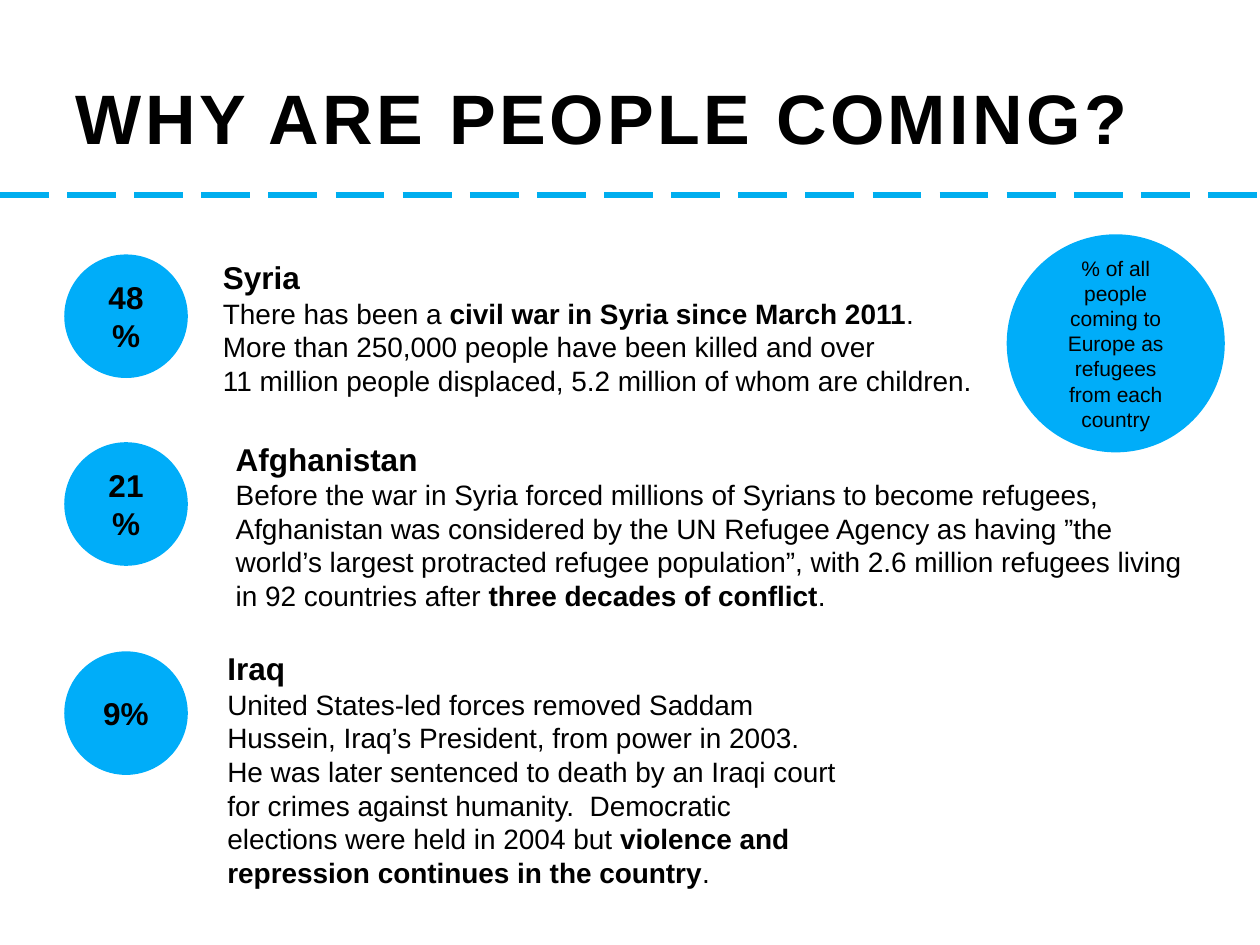
from lxml import etree
from pptx import Presentation
from pptx.dml.color import RGBColor
from pptx.enum.dml import MSO_LINE
from pptx.enum.shapes import MSO_CONNECTOR, MSO_SHAPE
from pptx.enum.text import MSO_ANCHOR, PP_ALIGN
from pptx.oxml.ns import qn
from pptx.util import Pt

LONG_DASH = MSO_LINE.LONG_DASH
STRAIGHT = MSO_CONNECTOR.STRAIGHT
ELLIPSE, ROUND_RECT = MSO_SHAPE.OVAL, MSO_SHAPE.ROUNDED_RECTANGLE
TOP, MIDDLE = MSO_ANCHOR.TOP, MSO_ANCHOR.MIDDLE
LEFT, CENTER = PP_ALIGN.LEFT, PP_ALIGN.CENTER

BLACK = RGBColor(0x00, 0x00, 0x00)
RULE_BLUE = RGBColor(0x00, 0xAE, 0xEF)
CIRCLE_BLUE = RGBColor(0x00, 0xAD, 0xF9)
FONT = "Arial"
SLIDE_WIDTH, SLIDE_HEIGHT = 720, 540
CIRCLE_LEFT, CIRCLE_SIZE = 36.7, 70.6

# Share, circle top, text box (left, top, width, height), country,
# and the reasons as (wording, bold) runs.
COUNTRIES = [
    ("48%", 145.4, (115.9, 139.7, 578.2, 90.7), "Syria", [
        ("There has been a ", False),
        ("civil war in Syria since March 2011", True),
        (". \nMore than 250,000 people have been killed and over \n"
         "11 million people displaced, 5.2 million of whom are children.", False),
    ]),
    ("21%", 252.7, (121.7, 241.9, 572.4, 121), "Afghanistan ", [
        ("Before the war in Syria forced millions of Syrians to become refugees, "
         "Afghanistan was considered by the UN Refugee Agency as having ”the "
         "world’s largest protracted refugee population”, with 2.6 million "
         "refugees living in 92 countries after ", False),
        ("three decades of conflict", True),
        (".", False),
    ]),
    ("9%", 372.2, (115.9, 360.7, 378, 141.8), "Iraq ", [
        ("United States-led forces removed Saddam Hussein, Iraq’s President, from "
         "power in 2003. He was later sentenced to death by an Iraqi court for "
         "crimes against humanity.  Democratic elections were held in 2004 but ", False),
        ("violence and repression continues in the country", True),
        (".", False),
    ]),
]


def add_run(paragraph, wording, size, bold=False):
    """Add a run, turning each newline into a line break."""
    for index, line in enumerate(wording.split("\n")):
        if index:
            paragraph.add_line_break()
        if line:
            run = paragraph.add_run()
            run.text = line
            run.font.name = FONT
            run.font.size = Pt(size)
            run.font.bold = bold
            run.font.color.rgb = BLACK


def add_plain_shape(slide, preset, box, anchor, alignment):
    shape = slide.shapes.add_shape(preset, *map(Pt, box))
    shape.shadow.inherit = False
    shape.fill.background()
    shape.line.fill.background()
    shape.text_frame.word_wrap = True
    shape.text_frame.vertical_anchor = anchor
    shape.text_frame.paragraphs[0].alignment = alignment
    return shape


def add_circle(slide, box, wording, size, bold=False):
    circle = add_plain_shape(slide, ELLIPSE, box, MIDDLE, CENTER)
    circle.fill.solid()
    circle.fill.fore_color.rgb = CIRCLE_BLUE
    add_run(circle.text_frame.paragraphs[0], wording, size, bold)


def add_country_text(slide, box, country, reasons):
    panel = add_plain_shape(slide, ROUND_RECT, box, TOP, LEFT)
    paragraph = panel.text_frame.paragraphs[0]
    add_run(paragraph, country + "\n", 18, True)
    for wording, bold in reasons:
        add_run(paragraph, wording, 16, bold)


def add_header(slide, box):
    """Fill the title and draw the dashed rule along the lower edge of the box."""
    left, top, width, height = box
    title = slide.shapes.title
    title.left, title.top, title.width, title.height = map(Pt, box)
    title.text_frame.vertical_anchor = MIDDLE
    title.text_frame.word_wrap = True
    paragraph = title.text_frame.paragraphs[0]
    paragraph.alignment = LEFT
    add_run(paragraph, "WHY ARE PEOPLE COMING?", 40, True)
    paragraph.runs[0].font._element.set("spc", "200")

    rule_y = Pt(top + height)
    rule = slide.shapes.add_connector(STRAIGHT, 0, rule_y, Pt(SLIDE_WIDTH), rule_y)
    rule.line.color.rgb = RULE_BLUE
    rule.line.width = Pt(3.5)
    rule.line.dash_style = LONG_DASH
    etree.SubElement(rule._element.spPr, qn("a:effectLst"))


def main():
    deck = Presentation()
    deck.slide_width, deck.slide_height = Pt(SLIDE_WIDTH), Pt(SLIDE_HEIGHT)
    slide = deck.slides.add_slide(deck.slide_layouts[5])
    add_header(slide, (36, 21.6, 648, 90))
    for share, circle_top, text_box, country, reasons in COUNTRIES:
        add_country_text(slide, text_box, country, reasons)
        circle_box = (CIRCLE_LEFT, circle_top, CIRCLE_SIZE, CIRCLE_SIZE)
        add_circle(slide, circle_box, share, 18, True)
    add_circle(slide, (575.3, 133.9, 124.6, 124.6),
               "% of all people coming to Europe as refugees from each country", 12)
    deck.save("out.pptx")


if __name__ == "__main__":
    main()
